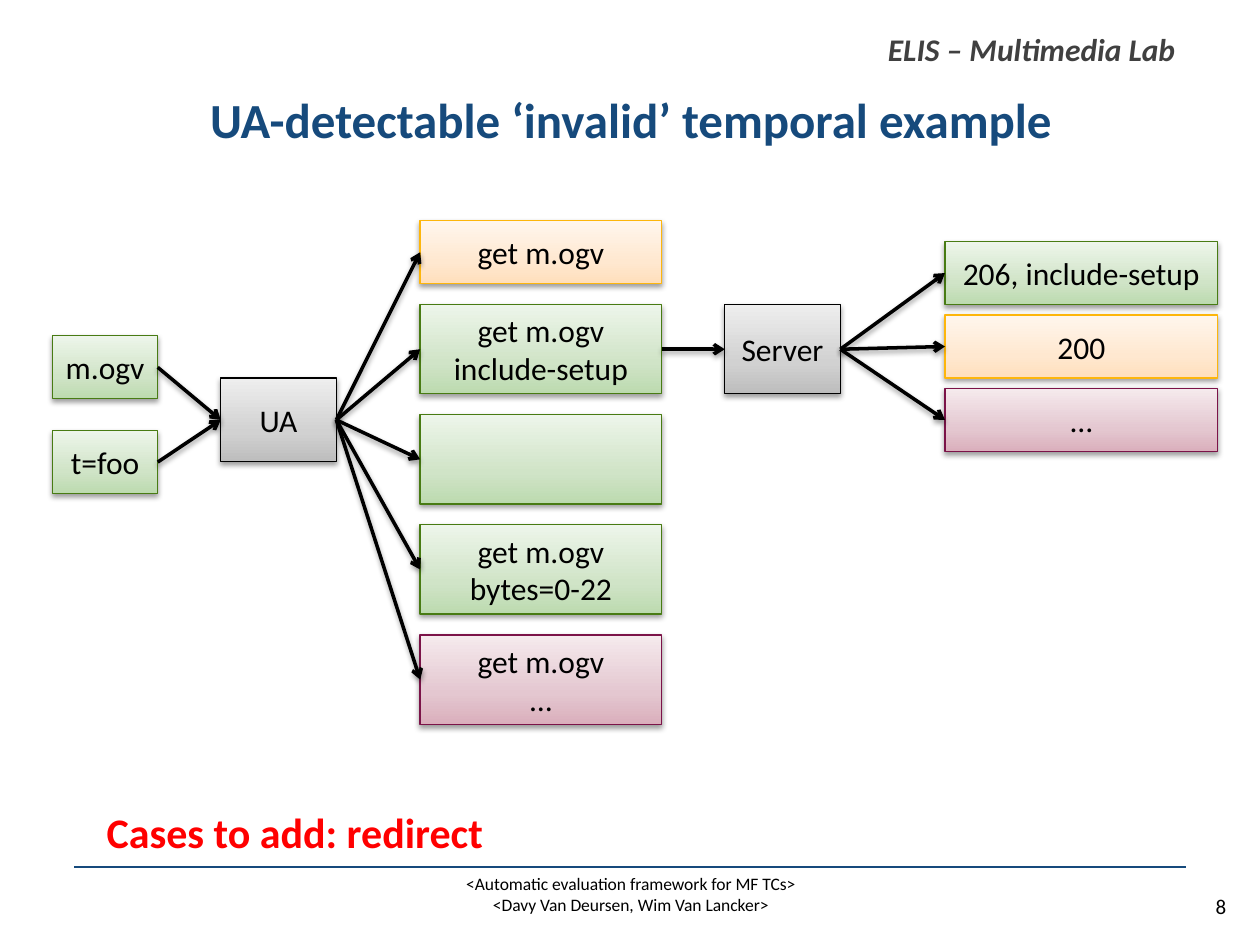
from lxml import etree
from copy import deepcopy
from pptx import Presentation
from pptx.dml.color import RGBColor
from pptx.enum.shapes import MSO_CONNECTOR, MSO_SHAPE
from pptx.enum.text import MSO_ANCHOR, MSO_AUTO_SIZE, PP_ALIGN
from pptx.oxml.ns import qn
from pptx.util import Cm, Pt

RECTANGLE = MSO_SHAPE.RECTANGLE
STRAIGHT = MSO_CONNECTOR.STRAIGHT
MIDDLE = MSO_ANCHOR.MIDDLE
GROW = MSO_AUTO_SIZE.SHAPE_TO_FIT_TEXT
LEFT, CENTER, JUSTIFY = PP_ALIGN.LEFT, PP_ALIGN.CENTER, PP_ALIGN.JUSTIFY
LEFT_SIDE, RIGHT_SIDE = 1, 3
NAVY, BLACK = "164A7C", "000000"
STOP_POSITIONS = (0, 0.35, 1)
PALETTES = {
    "green": ("487B13", ("BCDAAF", "D0E4C7", "EDF5EA")),
    "gray": (BLACK, ("BDBDBD", "D1D1D1", "EEEEEE")),
    "orange": ("FDB60C", ("FFDFBC", "FFE8D0", "FFF6ED")),
    "plum": ("7B1348", ("DAAFBC", "E4C7D0", "F5EAED")),
}


def color(value):
    return RGBColor.from_string(value)


def write_text(frame, lines, alignment, text_color=BLACK, **font_format):
    frame.text = "\n".join(lines)
    for paragraph in frame.paragraphs:
        paragraph.alignment = alignment
        for name, value in {"name": "Calibri", **font_format}.items():
            setattr(paragraph.font, name, value)
        paragraph.font.color.rgb = color(text_color)


def add_text(slide, position, lines, alignment, wrap=True, **text_format):
    shape = slide.shapes.add_textbox(*map(Cm, position))
    shape.text_frame.word_wrap = wrap
    shape.text_frame.auto_size = GROW
    write_text(shape.text_frame, lines, alignment, **text_format)


def add_effects(properties, shadow=True):
    effects = etree.SubElement(properties, qn("a:effectLst"))
    if shadow:
        outer = etree.SubElement(effects, qn("a:outerShdw"), blurRad="40000",
                                 dist="20000", dir="5400000", rotWithShape="0")
        shade = etree.SubElement(outer, qn("a:srgbClr"), val=BLACK)
        etree.SubElement(shade, qn("a:alpha"), val="38000")


def add_box(slide, position, palette, lines=()):
    shape = slide.shapes.add_shape(RECTANGLE, *map(Cm, position))
    line_color, stop_colors = PALETTES[palette]
    shape.fill.gradient()
    shape.fill.gradient_angle = 90
    stop_list = next(shape.element.spPr.iter(qn("a:gsLst")))
    stop_list.insert(1, deepcopy(stop_list[0]))
    for stop, place, stop_color in zip(shape.fill.gradient_stops, STOP_POSITIONS, stop_colors):
        stop.position = place
        stop.color.rgb = color(stop_color)
    shape.line.color.rgb = color(line_color)
    shape.line.width = Pt(0.75)
    add_effects(shape.element.spPr)
    if lines:
        shape.text_frame.vertical_anchor = MIDDLE
        write_text(shape.text_frame, lines, CENTER, size=Pt(18))
    return shape


def add_column(slide, left, top, size, gap, entries):
    width, height = size
    return [
        add_box(slide, (left, top + index * (height + gap), width, height), palette, lines)
        for index, (palette, lines) in enumerate(entries)
    ]


def add_arrow(slide, source, target):
    arrow = slide.shapes.add_connector(STRAIGHT, 0, 0, 0, 0)
    arrow.begin_connect(source, RIGHT_SIDE)
    arrow.end_connect(target, LEFT_SIDE)
    arrow.line.color.rgb = color(BLACK)
    arrow.line.width = Pt(2)
    etree.SubElement(arrow.line._get_or_add_ln(), qn("a:tailEnd"), type="arrow")
    add_effects(arrow.element.spPr)


def add_title(slide, text):
    title = slide.shapes.title
    place = {"left": 1.4, "top": 1.47, "width": 22.63, "height": 1.85}
    for name, value in place.items():
        setattr(title, name, Cm(value))
    title.text_frame.vertical_anchor = MIDDLE
    write_text(title.text_frame, [text], CENTER, NAVY, size=Pt(28), bold=True)


def add_frame(slide):
    add_text(slide, (23.83, 17.88, 1.57, 0.76), ["8"], CENTER, size=Pt(12))
    add_text(slide, (17.65, 0.48, 6.35, 1.02), ["ELIS – Multimedia Lab"], JUSTIFY, wrap=False,
             text_color="404040", size=Pt(18), bold=True, italic=True)
    add_text(slide, (1.5, 17.48, 22.43, 1.55),
             ["<Automatic evaluation framework for MF TCs>", "<Davy Van Deursen, Wim Van Lancker>"],
             CENTER, size=Pt(10))
    rule = slide.shapes.add_connector(STRAIGHT, Cm(1.5), Cm(17.48), Cm(23.9), Cm(17.48))
    rule.line.color.rgb = color(NAVY)
    rule.line.width = Pt(1.5)
    add_effects(rule.element.spPr, shadow=False)


def add_flow(slide):
    inputs = add_column(slide, 1.06, 6.77, (2.12, 1.27), 0.64, [
        ("green", ["m.ogv"]),
        ("green", ["t=foo"]),
    ])
    agent = add_box(slide, (4.45, 7.62, 2.33, 1.69), "gray", ["UA"])
    plain_request = add_box(slide, (8.47, 4.45, 4.87, 1.27), "orange", ["get m.ogv"])
    requests = add_column(slide, 8.47, 6.14, (4.87, 1.8), 0.42, [
        ("green", ["get m.ogv", "include-setup"]),
        ("green", []),
        ("green", ["get m.ogv", "bytes=0-22"]),
        ("plum", ["get m.ogv", "…"]),
    ])
    server = add_box(slide, (14.61, 6.14, 2.33, 1.8), "gray", ["Server"])
    responses = add_column(slide, 19.05, 4.87, (5.5, 1.27), 0.21, [
        ("green", ["206, include-setup"]),
        ("orange", ["200"]),
        ("plum", ["…"]),
    ])
    links = [(source, agent) for source in inputs]
    links += [(agent, request) for request in [plain_request, *requests]]
    links += [(requests[0], server)]
    links += [(server, response) for response in responses]
    for source, target in links:
        add_arrow(slide, source, target)


def main():
    presentation = Presentation()
    presentation.slide_width = Cm(25.4)
    presentation.slide_height = Cm(19.05)
    slide = presentation.slides.add_slide(presentation.slide_layouts[5])
    add_frame(slide)
    add_title(slide, "UA-detectable ‘invalid’ temporal example")
    add_flow(slide)
    add_text(slide, (1.9, 16.13, 19.58, 1.27), ["Cases to add: redirect"], LEFT,
             text_color="FF0000", size=Pt(24), bold=True)
    presentation.save("out.pptx")


if __name__ == "__main__":
    main()
